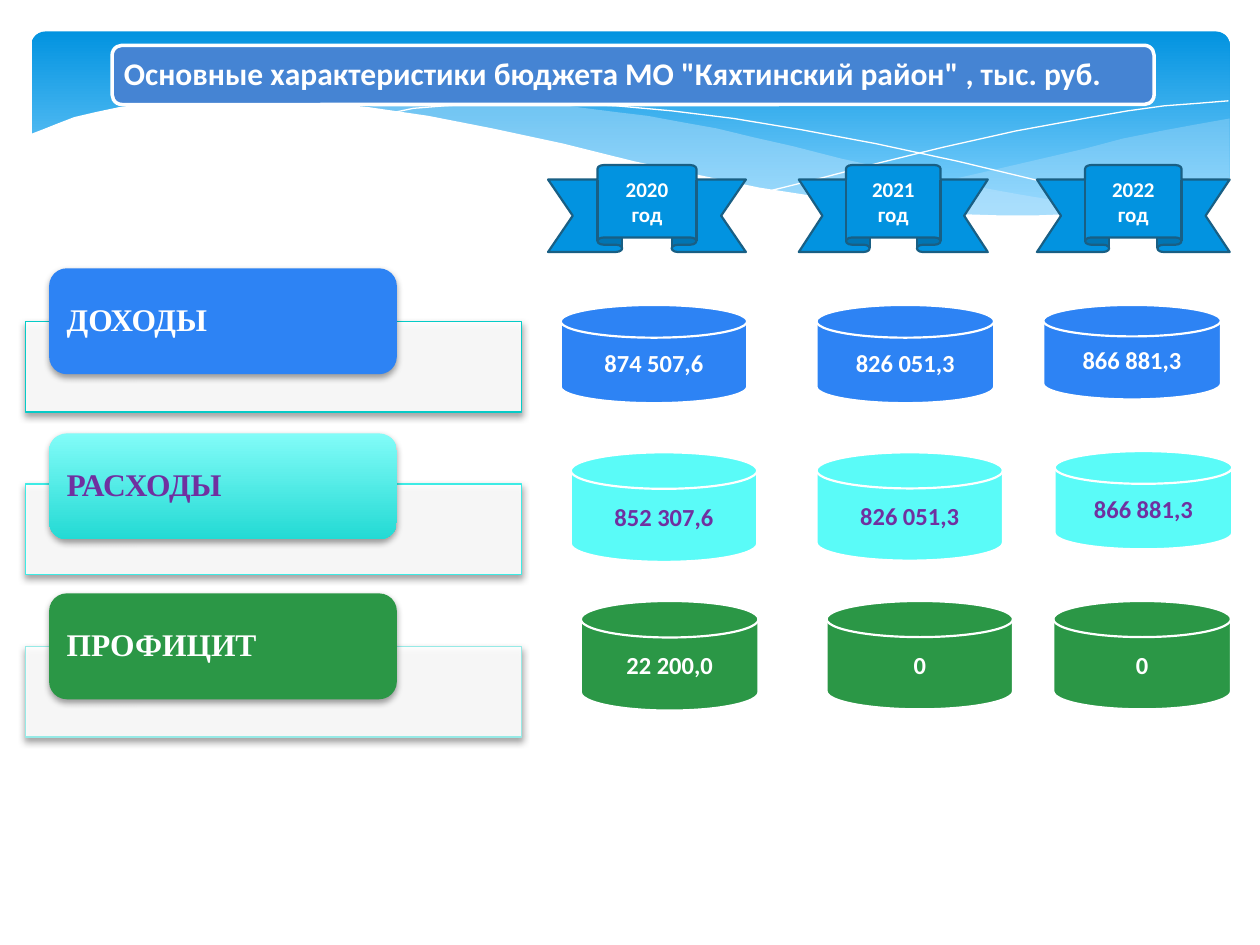
from pptx import Presentation
from pptx.dml.color import RGBColor
from pptx.enum.shapes import MSO_SHAPE
from pptx.enum.text import MSO_ANCHOR, PP_ALIGN
from pptx.oxml import parse_xml
from pptx.oxml.ns import nsdecls
from pptx.util import Inches, Pt
from lxml import etree

RECT = MSO_SHAPE.RECTANGLE
ROUND = MSO_SHAPE.ROUNDED_RECTANGLE
RIBBON = MSO_SHAPE.UP_RIBBON
DISK = MSO_SHAPE.FLOWCHART_MAGNETIC_DISK
MIDDLE = MSO_ANCHOR.MIDDLE
LEFT, CENTER = PP_ALIGN.LEFT, PP_ALIGN.CENTER

RIGHT_WAVE = [
    (9.76, 0.94), (9.48, 0.99), (9.21, 1.04), (8.91, 1.1), (8.61, 1.18),
    (8.05, 1.31), (7.53, 1.43), (7.06, 1.52), (6.61, 1.6), (6.91, 1.64),
    (7.19, 1.67), (7.45, 1.69), (7.69, 1.71), (7.92, 1.72), (8.35, 1.72),
    (8.63, 1.7), (8.89, 1.66), (9.13, 1.62), (9.35, 1.56), (9.63, 1.47),
    (9.76, 1.41)]
LONG_WAVE = [
    (8.93, 1.67), (8.66, 1.64), (8.07, 1.54), (7.41, 1.42), (6.68, 1.26),
    (6.29, 1.16), (5.98, 1.09), (5.69, 1.02), (5.41, 0.97), (5.14, 0.92),
    (4.89, 0.89), (4.42, 0.83), (3.99, 0.8), (3.61, 0.8), (3.28, 0.81),
    (2.99, 0.84), (2.86, 0.86), (3.23, 0.9), (3.62, 0.97), (4.04, 1.06),
    (4.49, 1.16), (5.3, 1.35), (5.84, 1.46), (6.18, 1.53), (6.5, 1.58),
    (6.8, 1.63), (7.09, 1.66), (7.36, 1.69), (7.61, 1.71), (7.85, 1.72),
    (8.18, 1.73), (8.48, 1.72), (8.76, 1.69)]
LONG_LINE = [
    (3.09, 0.9), (3.28, 0.86), (3.53, 0.84), (3.87, 0.82), (4.16, 0.81),
    (4.5, 0.82), (4.89, 0.84), (5.33, 0.88), (5.82, 0.94), (6.36, 1.03),
    (6.95, 1.14), (7.6, 1.28), (8.31, 1.45), (9.07, 1.66)]
RIGHT_LINE = [
    (6.13, 1.51), (6.53, 1.41), (6.95, 1.3), (7.48, 1.17), (8.06, 1.04),
    (8.66, 0.93), (8.95, 0.88), (9.24, 0.84), (9.51, 0.82), (9.75, 0.8)]
HILL = [
    (9.77, 1.41), (9.59, 1.48), (9.4, 1.54), (9.2, 1.59), (8.99, 1.64),
    (8.75, 1.67), (8.5, 1.7), (8.23, 1.71), (7.93, 1.71), (7.61, 1.7),
    (7.26, 1.67), (6.88, 1.62), (6.48, 1.56), (6.03, 1.49), (5.55, 1.39),
    (5.03, 1.28), (4.47, 1.14), (3.91, 1.02), (3.4, 0.92), (2.92, 0.85),
    (2.5, 0.81), (2.11, 0.78), (1.77, 0.78), (1.46, 0.79), (1.19, 0.82),
    (0.95, 0.85), (0.76, 0.89), (0.59, 0.93), (0.46, 0.98), (0.36, 1.02),
    (0.23, 1.07), (0.23, 2.24), (9.77, 2.24)]

YEARS = [("2020 год", 4.35, 1.57), ("2021 год", 6.34, 1.5),
         ("2022 год", 8.23, 1.53)]
ROWS = [
    ("ДОХОДЫ", 2.13, 2.55, "2D83F4", "2D83F4", "05CBC7", "FFFFFF",
     [("874 507,6", 4.45, 2.42, 1.48, 0.78),
      ("826 051,3", 6.48, 2.42, 1.41, 0.78),
      ("866 881,3", 8.28, 2.42, 1.41, 0.75)]),
    ("РАСХОДЫ", 3.44, 3.84, ("82FCF8", "23DAD4", 1), "5AFBF8", "3DEBE5",
     "7030A0",
     [("852 307,6", 4.53, 3.59, 1.48, 0.87),
      ("826 051,3", 6.48, 3.59, 1.48, 0.86),
      ("866 881,3", 8.37, 3.58, 1.41, 0.78)]),
    ("ПРОФИЦИТ", 4.71, 5.13, "2B9746", "2B9746", "96EAE6", "FFFFFF",
     [("22 200,0", 4.61, 4.77, 1.41, 0.87),
      ("0", 6.56, 4.77, 1.48, 0.86),
      ("0", 8.36, 4.77, 1.41, 0.86)]),
]


def color(code):
    """Turn a hex string into a colour."""
    return RGBColor.from_string(code)


def paint(shape, fill=None, line=None, weight=1.25, alpha=100):
    """Set fill (hex, or top, bottom and end of a gradient) and outline."""
    shape.shadow.inherit = False
    if fill is None:
        shape.fill.background()
    elif isinstance(fill, tuple):
        shape.fill.gradient()
        shape.fill.gradient_angle = 270
        first, last = shape.fill.gradient_stops
        first.color.rgb, last.color.rgb = color(fill[0]), color(fill[1])
        first.position, last.position = 0, fill[2]
    else:
        shape.fill.solid()
        shape.fill.fore_color.rgb = color(fill)
    if alpha < 100:
        tone = shape._element.spPr.find("{*}solidFill/{*}srgbClr")
        etree.SubElement(tone, tone.tag.replace("srgbClr", "alpha"),
                         val=str(alpha * 1000))
    if line:
        shape.line.color.rgb = color(line)
        shape.line.width = Pt(weight)
    else:
        shape.line.fill.background()


def shade(shape):
    """Add a soft shadow below a shape."""
    effects = shape._element.spPr.find("{*}effectLst")
    effects.append(parse_xml(
        f'<a:outerShdw {nsdecls("a")} blurRad="{Pt(4)}" dist="{Pt(2)}" '
        'dir="5400000" rotWithShape="0"><a:srgbClr val="000000">'
        '<a:alpha val="38000"/></a:srgbClr></a:outerShdw>'))


def box(slide, kind, left, top, width, height, **look):
    """Add a painted preset shape."""
    shape = slide.shapes.add_shape(
        kind, Inches(left), Inches(top), Inches(width), Inches(height))
    paint(shape, **look)
    return shape


def wave(slide, points, close=True, **look):
    """Add a painted outline through points in inches."""
    start, *rest = [(Inches(x), Inches(y)) for x, y in points]
    build = slide.shapes.build_freeform(*start)
    build.add_line_segments(rest, close=close)
    paint(build.convert_to_shape(), **look)


def label(shape, text, size, tone="FFFFFF", font="Calibri", align=CENTER,
          space=1.0, inset=0.1):
    """Write one bold paragraph in a shape."""
    frame = shape.text_frame
    frame.word_wrap = True
    frame.vertical_anchor = MIDDLE
    frame.margin_left = frame.margin_right = Inches(inset)
    para = frame.paragraphs[0]
    para.text = text
    para.alignment = align
    para.line_spacing = space
    para.font.size = Pt(size)
    para.font.name = font
    para.font.bold = True
    para.font.color.rgb = color(tone)


def header(slide):
    """Draw the sky band with its waves and the title."""
    sky = box(slide, ROUND, 0.25, 0.25, 9.51, 1.56,
              fill=("0293E0", "83D3FE", 0.9))
    sky.adjustments[0] = 0.07
    wave(slide, RIGHT_WAVE, fill="C6E7FC", alpha=29)
    wave(slide, LONG_WAVE, fill="C6E7FC", alpha=40)
    for points in (LONG_LINE, RIGHT_LINE):
        wave(slide, points, close=False, line="FFFFFF", weight=0)
    wave(slide, HILL, fill="FFFFFF")
    title = box(slide, ROUND, 0.89, 0.36, 8.27, 0.47,
                fill="4584D3", line="FFFFFF", weight=2)
    label(title, 'Основные характеристики бюджета МО "Кяхтинский район" , '
          'тыс. руб.', 18, align=LEFT, space=0.9, inset=0.07)


def row(slide, name, top, base, fill, disk, edge, tone, cells):
    """Draw a named panel and its three yearly values."""
    shade(box(slide, RECT, 0.2, base, 3.94, 0.72, fill="FFFFFF",
              alpha=90, line=edge, weight=0.75))
    card = box(slide, ROUND, 0.39, top, 2.76, 0.84, fill=fill)
    shade(card)
    label(card, name, 18, tone, "Times New Roman", LEFT, 0.9)
    for text, *place in cells:
        drum = box(slide, DISK, *place, fill=disk, line="FFFFFF")
        label(drum, text, 14, tone)


def main():
    """Build and save the slide."""
    deck = Presentation()
    deck.slide_width, deck.slide_height = Inches(10), Inches(7.5)
    slide = deck.slides.add_slide(deck.slide_layouts[6])
    header(slide)
    for text, left, width in YEARS:
        ribbon = box(slide, RIBBON, left, 1.31, width, 0.69,
                     fill="0293E0", line="195F84")
        label(ribbon, text, 12)
    for parts in ROWS:
        row(slide, *parts)
    deck.save("out.pptx")


if __name__ == "__main__":
    main()
